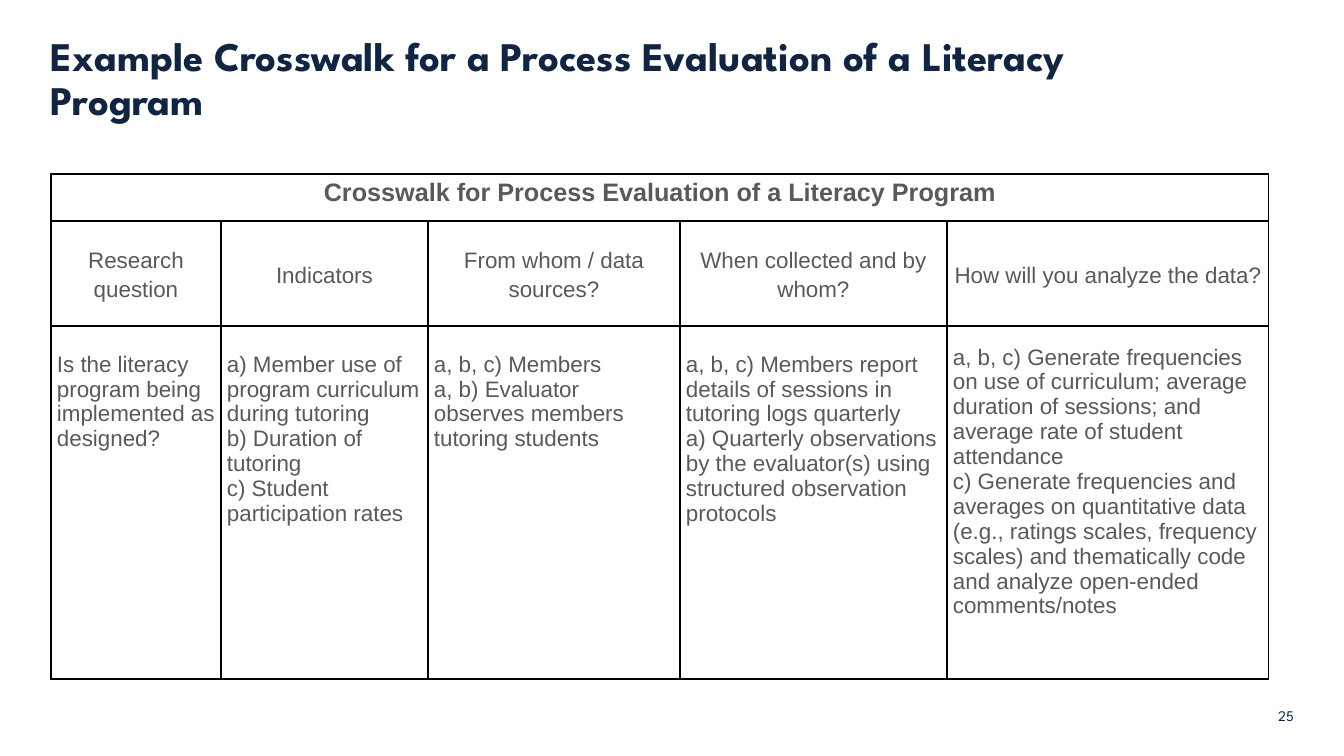
from dataclasses import dataclass

from lxml.etree import SubElement
from pptx import Presentation
from pptx.dml.color import RGBColor
from pptx.enum.text import MSO_ANCHOR, PP_ALIGN
from pptx.oxml.ns import qn
from pptx.util import Pt


@dataclass(frozen=True)
class Theme:
    navy: str = "112441"
    gray: str = "595959"
    border: str = "000000"
    display_font: str = "League Spartan"
    table_font: str = "Arial"
    title_size: float = 29
    caption_size: float = 18
    table_size: float = 16
    number_size: float = 10.5
    border_width: float = 1


THEME = Theme()
EMU_PER_PX = 914400 / 100.8

CAPTION = "Crosswalk for Process Evaluation of a Literacy Program"
COLUMN_WIDTHS = [170, 207, 252, 267, 322]
ROW_HEIGHTS = [47, 105, 353]
HEADINGS = [
    "Research question",
    "Indicators",
    "From whom / data sources?",
    "When collected and by whom?",
    "How will you analyze the data?",
]
# Each answer: top margin, paragraphs
ANSWERS = [
    (26, ["Is the literacy program being implemented as designed?"]),
    (26, ["a) Member use of program curriculum during tutoring",
          "b) Duration of tutoring",
          "c) Student participation rates"]),
    (26, ["a, b, c) Members",
          "a, b) Evaluator observes members tutoring students"]),
    (26, ["a, b, c) Members report details of sessions in tutoring logs quarterly",
          "a) Quarterly observations by the evaluator(s) using structured "
          "observation protocols"]),
    (19, ["a, b, c) Generate frequencies on use of curriculum; average duration "
          "of sessions; and average rate of student attendance",
          "c) Generate frequencies and averages on quantitative data (e.g., "
          "ratings scales, frequency scales) and thematically code and analyze "
          "open-ended comments/notes"]),
]


def px(length):
    return round(length * EMU_PER_PX)


def set_margins(holder, left=0, top=0, right=0, bottom=0):
    holder.margin_left, holder.margin_top = px(left), px(top)
    holder.margin_right, holder.margin_bottom = px(right), px(bottom)


def write(text_frame, texts, font, size, color, bold=False,
          alignment=PP_ALIGN.LEFT, line_spacing=1.0):
    for index, text in enumerate(texts):
        paragraph = text_frame.add_paragraph() if index else text_frame.paragraphs[0]
        paragraph.alignment = alignment
        paragraph.line_spacing = line_spacing
        run = paragraph.add_run()
        run.text = text
        run.font.name = font
        run.font.size = Pt(size)
        run.font.bold = bold
        run.font.color.rgb = RGBColor.from_string(color)


def add_text(slide, box, text, size, anchor, **style):
    shape = slide.shapes.add_textbox(*map(px, box))
    text_frame = shape.text_frame
    text_frame.word_wrap = True
    text_frame.vertical_anchor = anchor
    set_margins(text_frame)
    write(text_frame, [text], THEME.display_font, size, THEME.navy, **style)


def add_borders(cell):
    properties = cell._tc.get_or_add_tcPr()
    for side in ("a:lnL", "a:lnR", "a:lnT", "a:lnB"):
        line = SubElement(properties, qn(side), w=str(Pt(THEME.border_width)))
        fill = SubElement(line, qn("a:solidFill"))
        SubElement(fill, qn("a:srgbClr"), val=THEME.border)


def fill_cell(cell, texts, size=THEME.table_size, top=0,
              anchor=MSO_ANCHOR.TOP, **style):
    set_margins(cell, left=6, top=top, right=6)
    cell.vertical_anchor = anchor
    write(cell.text_frame, texts, THEME.table_font, size, THEME.gray, **style)


def add_crosswalk(slide, left, top):
    frame = slide.shapes.add_table(
        len(ROW_HEIGHTS), len(COLUMN_WIDTHS), px(left), px(top),
        px(sum(COLUMN_WIDTHS)), px(sum(ROW_HEIGHTS)))
    table = frame.table
    table.first_row = table.horz_banding = False
    for column, width in zip(table.columns, COLUMN_WIDTHS):
        column.width = px(width)
    for row, height in zip(table.rows, ROW_HEIGHTS):
        row.height = px(height)
    for cell in table.iter_cells():
        add_borders(cell)
        cell.fill.background()

    # Caption across all columns
    caption = table.cell(0, 0)
    caption.merge(table.cell(0, len(COLUMN_WIDTHS) - 1))
    fill_cell(caption, [CAPTION], THEME.caption_size, bold=True,
              alignment=PP_ALIGN.CENTER, line_spacing=1.15)

    # Headings and answers
    for index, (heading, (margin, answer)) in enumerate(zip(HEADINGS, ANSWERS)):
        fill_cell(table.cell(1, index), [heading], anchor=MSO_ANCHOR.MIDDLE,
                  alignment=PP_ALIGN.CENTER, line_spacing=1.15)
        fill_cell(table.cell(2, index), answer, top=margin)


def main():
    presentation = Presentation()
    presentation.slide_width, presentation.slide_height = px(1344), px(756)
    slide = presentation.slides.add_slide(presentation.slide_layouts[6])

    # Title
    add_text(slide, (51, 26, 1024, 98),
             "Example Crosswalk for a Process Evaluation of a Literacy Program",
             THEME.title_size, MSO_ANCHOR.BOTTOM, bold=True, line_spacing=0.9)
    # Table
    add_crosswalk(slide, 51, 174)
    # Slide number
    add_text(slide, (1270, 708, 32, 15), "25", THEME.number_size,
             MSO_ANCHOR.MIDDLE, alignment=PP_ALIGN.CENTER)

    presentation.save("out.pptx")


if __name__ == "__main__":
    main()
